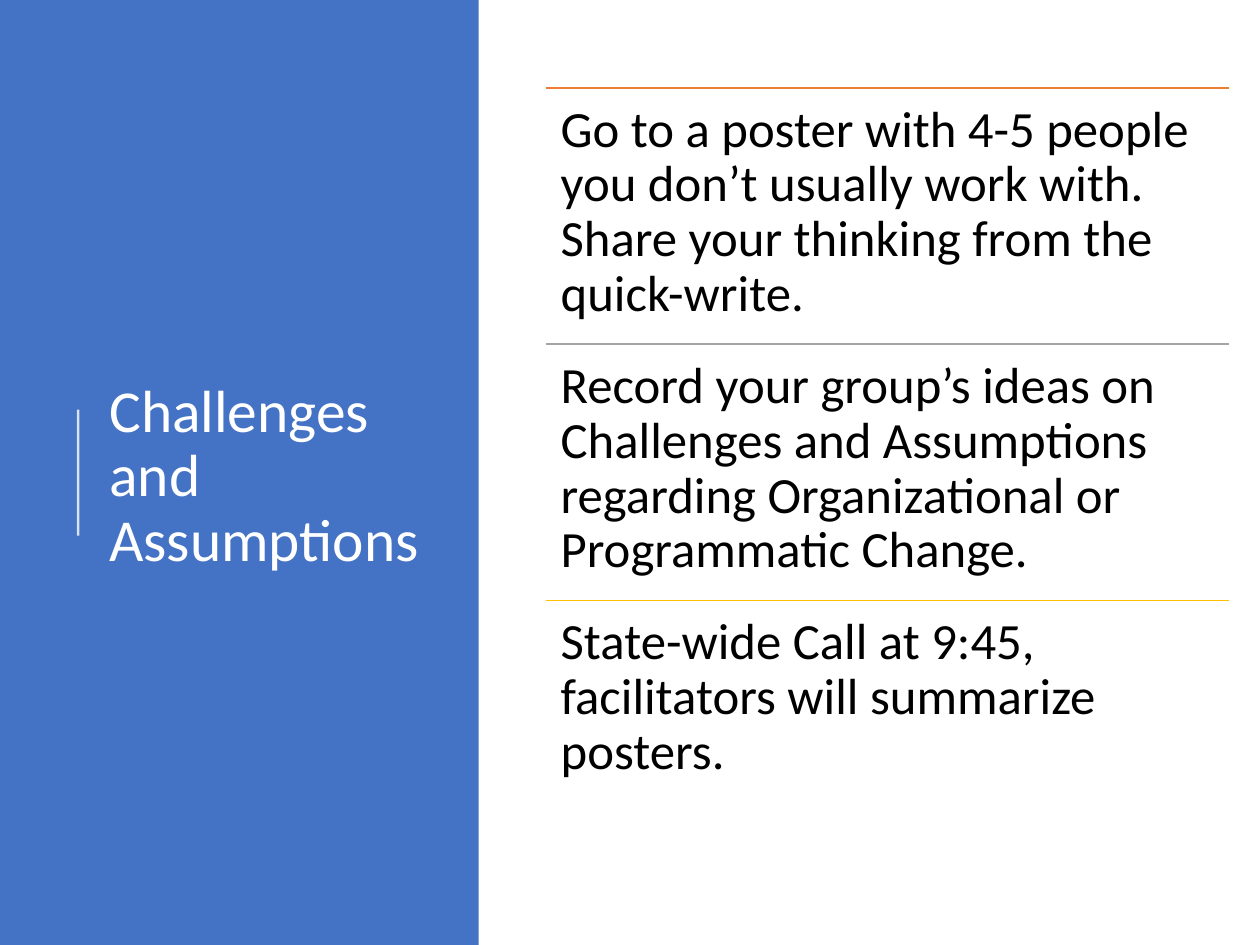
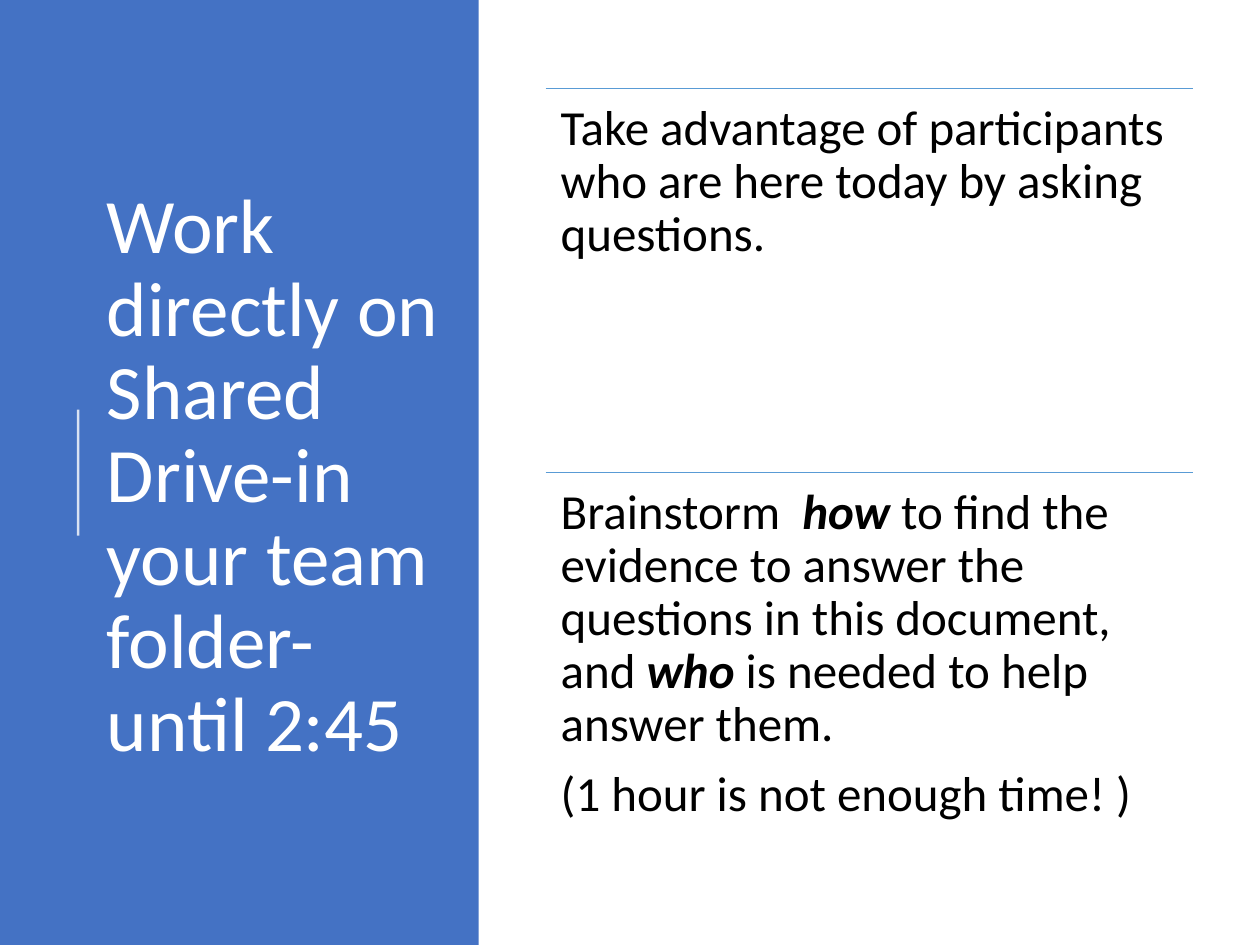
from lxml import etree
from pptx import Presentation
from pptx.dml.color import RGBColor
from pptx.enum.shapes import MSO_CONNECTOR, MSO_SHAPE
from pptx.enum.text import MSO_ANCHOR
from pptx.oxml.ns import qn
from pptx.util import Inches, Pt

STRAIGHT = MSO_CONNECTOR.STRAIGHT
RECTANGLE = MSO_SHAPE.RECTANGLE
TOP, MIDDLE = MSO_ANCHOR.TOP, MSO_ANCHOR.MIDDLE

WHITE = RGBColor(0xFF, 0xFF, 0xFF)
BLACK = RGBColor(0x00, 0x00, 0x00)
BLUE = RGBColor(0x44, 0x72, 0xC4)
ORANGE = RGBColor(0xED, 0x7D, 0x31)
GRAY = RGBColor(0xA5, 0xA5, 0xA5)
GOLD = RGBColor(0xFF, 0xC0, 0x00)
SKY = RGBColor(0x59, 0x9B, 0xD5)

FONT = "Calibri"
SLIDE_WIDTH, SLIDE_HEIGHT = 10, 7.5
PANEL_WIDTH = 3.8
TITLE_TOP, TITLE_HEIGHT = 0.78, 6.02
AGENDA_LEFT, AGENDA_TOP, AGENDA_BOTTOM = 4.33, 0.7, 6.8


class Deck:
    def __init__(self):
        self.prs = Presentation()
        self.prs.slide_width = Inches(SLIDE_WIDTH)
        self.prs.slide_height = Inches(SLIDE_HEIGHT)
        self.slide = None

    def add_slide(self, title, left, width, size):
        self.slide = self.prs.slides.add_slide(self.prs.slide_layouts[6])
        self.panel()
        self.rule(0.62, 4.25, 0.62, 3.25, WHITE, 1.5, opacity=80)
        self.text([[(title, False)]], left, TITLE_TOP, width, TITLE_HEIGHT,
                  size, WHITE, (0.1, 0.05), MIDDLE)

    def panel(self):
        panel = self.slide.shapes.add_shape(
            RECTANGLE, 0, 0, Inches(PANEL_WIDTH), Inches(SLIDE_HEIGHT))
        panel.shadow.inherit = False
        panel.fill.solid()
        panel.fill.fore_color.rgb = BLUE
        panel.line.fill.background()

    def rule(self, x1, y1, x2, y2, color, weight, opacity=100):
        rule = self.slide.shapes.add_connector(
            STRAIGHT, Inches(x1), Inches(y1), Inches(x2), Inches(y2))
        rule.line.color.rgb = color
        rule.line.width = Pt(weight)
        properties = rule._element.spPr
        if opacity < 100:
            tint = properties.find(".//" + qn("a:srgbClr"))
            etree.SubElement(tint, qn("a:alpha"), val=str(opacity * 1000))
        etree.SubElement(properties, qn("a:effectLst"))

    def text(self, paragraphs, left, top, width, height, size, color, insets, anchor):
        box = self.slide.shapes.add_textbox(
            Inches(left), Inches(top), Inches(width), Inches(height))
        frame = box.text_frame
        frame.word_wrap = True
        frame.vertical_anchor = anchor
        frame.margin_left = frame.margin_right = Inches(insets[0])
        frame.margin_top = frame.margin_bottom = Inches(insets[1])
        for index, runs in enumerate(paragraphs):
            paragraph = frame.add_paragraph() if index else frame.paragraphs[0]
            paragraph.line_spacing = 0.9
            paragraph.space_before = Pt(9.8 if index else 0)
            for words, stressed in runs:
                run = paragraph.add_run()
                run.text = words
                run.font.name = FONT
                run.font.size = Pt(size)
                run.font.color.rgb = color
                run.font.bold = run.font.italic = stressed

    def agenda(self, items, width, size, weight):
        height = (AGENDA_BOTTOM - AGENDA_TOP) / len(items)
        for index, (color, paragraphs) in enumerate(items):
            top = AGENDA_TOP + index * height
            self.rule(AGENDA_LEFT, top, AGENDA_LEFT + width, top, color, weight)
            self.text(paragraphs, AGENDA_LEFT, top, width, height,
                      size, BLACK, (0.12, 0.12), TOP)


def main():
    deck = Deck()

    deck.add_slide("Challenges and Assumptions", 0.77, 2.76, 34)
    steps = [
        (ORANGE, "Go to a poster with 4-5 people you don’t usually work with. "
                 "Share your thinking from the quick-write."),
        (GRAY, "Record your group’s ideas on Challenges and Assumptions "
               "regarding Organizational or Programmatic Change."),
        (GOLD, "State-wide Call at 9:45, facilitators will summarize posters."),
    ]
    deck.agenda([(color, [[(step, False)]]) for color, step in steps], 5.42, 29, 1)

    deck.add_slide("Work directly on Shared Drive-in your team folder- until 2:45",
                   0.75, 2.92, 44)
    advice = [[("Take advantage of participants who are here today "
                "by asking questions.", False)]]
    brainstorm = [
        [("Brainstorm  ", False),
         ("how", True),
         (" to find the evidence to answer the questions in this document, and ", False),
         ("who", True),
         (" is needed to help answer them.", False)],
        [("(1 hour is not enough time! )", False)],
    ]
    deck.agenda([(SKY, advice), (SKY, brainstorm)], 5.14, 28, 0.75)

    deck.prs.save("out.pptx")


if __name__ == "__main__":
    main()
